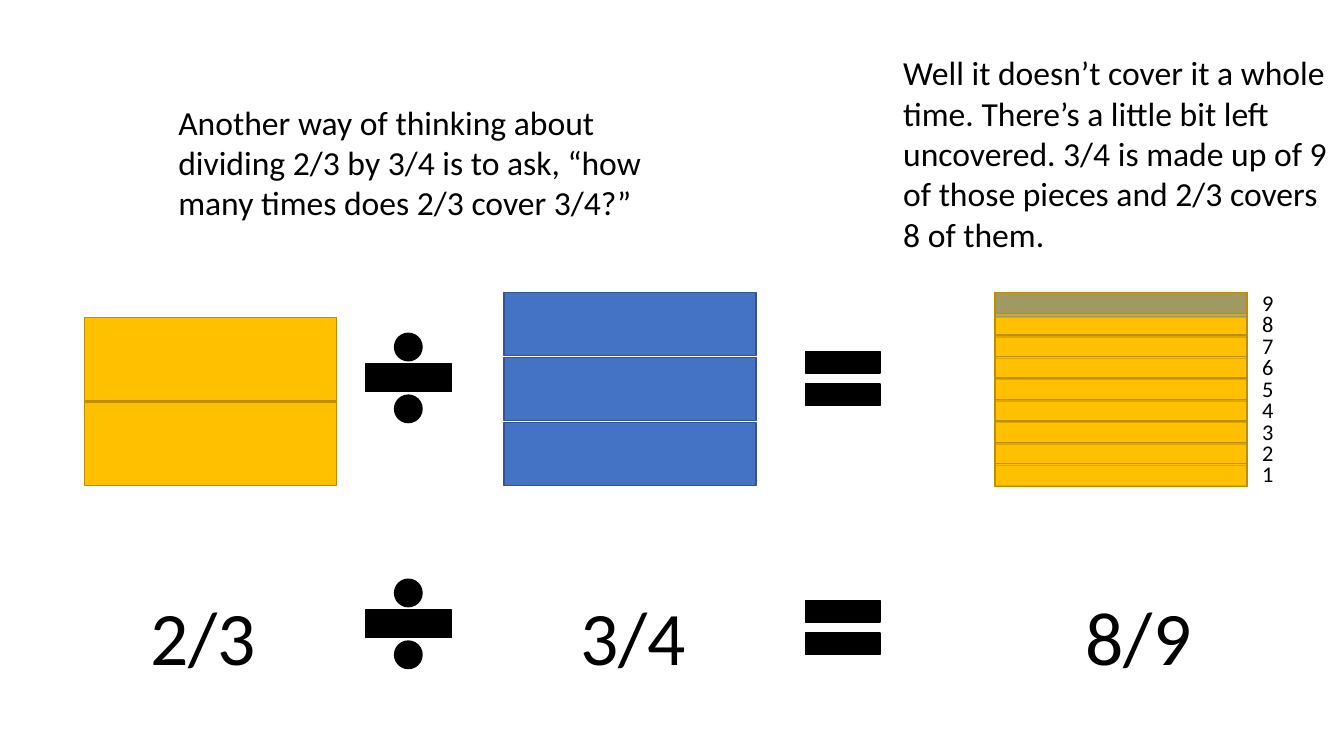
from lxml.etree import SubElement
from pptx import Presentation
from pptx.dml.color import RGBColor
from pptx.enum.shapes import MSO_SHAPE
from pptx.enum.text import MSO_AUTO_SIZE
from pptx.oxml.ns import qn
from pptx.util import Inches, Pt

HUES = {
    "ink": "000000",
    "gold": "FFC000",
    "gold edge": "BD8E00",
    "blue": "4472C4",
    "blue edge": "325491",
}
ASK = ("Another way of thinking about dividing 2/3 by 3/4 is to ask, "
       "“how many times does 2/3 cover 3/4?”")
REPLY = ("Well it doesn’t cover it a whole time. There’s a little bit left "
         "uncovered. 3/4 is made up of 9 of those pieces and 2/3 covers "
         "8 of them.")
WIDTH = 2.5
TOP = 2.9
STEP = 0.2125


def hue(name):
    """Return the named colour."""
    return RGBColor.from_string(HUES[name])


def add_form(shapes, kind, box, fill, edge, alpha=None):
    """Add a filled and outlined preset shape."""
    form = shapes.add_shape(kind, *map(Inches, box))
    form.shadow.inherit = False
    form.fill.solid()
    form.fill.fore_color.rgb = hue(fill)
    form.line.color.rgb = hue(edge)
    form.line.width = Pt(1)
    if alpha is not None:
        tint = form.fill._xPr.find(".//" + qn("a:srgbClr"))
        SubElement(tint, qn("a:alpha")).set("val", str(alpha * 1000))


def add_text(shapes, text, box, size, wrap=False):
    """Add a text box in the slide's font."""
    frame = shapes.add_textbox(*map(Inches, box)).text_frame
    frame.word_wrap = wrap
    frame.auto_size = MSO_AUTO_SIZE.SHAPE_TO_FIT_TEXT
    run = frame.paragraphs[0].add_run()
    run.text = text
    run.font.color.rgb = hue("ink")
    for key, value in {"name": "Calibri", "size": Pt(size)}.items():
        setattr(run.font, key, value)


def add_stack(shapes, left, top, count, step, high, tone, alpha=None):
    """Stack equal bars downwards."""
    for row in range(count):
        box = (left, top + row * step, WIDTH, high)
        add_form(shapes, MSO_SHAPE.RECTANGLE, box, tone, tone + " edge", alpha)


def add_thirds(shapes, left):
    """Stack the three blue bars of 3/4."""
    add_stack(shapes, left, TOP, 3, 0.645, 0.63, "blue")


def add_cover(shapes, left):
    """Lay 2/3 over 3/4 and count the ninths."""
    add_thirds(shapes, left)
    add_stack(shapes, left, 3.15, 1, 0, 1.67, "gold")
    add_stack(shapes, left, TOP, 9, STEP, 0.23, "gold", 50)
    for row in range(9):
        box = (12.42, 2.82 + row * STEP, 0.32, 0.37)
        add_text(shapes, str(9 - row), box, 16)


def add_signs(shapes, split, equal):
    """Add a divide sign and an equal sign at the given tops."""
    for kind, box in (
        (MSO_SHAPE.MATH_DIVIDE, (3.47, split, 1.16, 1.16)),
        (MSO_SHAPE.MATH_EQUAL, (7.86, equal, 1, 0.91)),
    ):
        add_form(shapes, kind, box, "ink", "ink")


def main():
    """Build and save the slide."""
    deck = Presentation()
    deck.slide_width, deck.slide_height = Inches(13.33), Inches(7.5)
    shapes = deck.slides.add_slide(deck.slide_layouts[6]).shapes
    add_signs(shapes, 3.17, 3.3)
    add_signs(shapes, 5.61, 5.77)
    for text, left in (("2/3", 1.39), ("3/4", 5.66), ("8/9", 10.67)):
        add_text(shapes, text, (left, 5.8, 1.26, 1.01), 54)
    add_stack(shapes.add_group_shape().shapes, 0.84, 3.15, 2, 0.84, 0.83, "gold")
    add_thirds(shapes.add_group_shape().shapes, 5)
    add_cover(shapes.add_group_shape().shapes, 9.87)
    add_text(shapes, ASK, (1.67, 0.96, 5.25, 1.31), 24, True)
    add_text(shapes, REPLY, (8.86, 0.47, 4.43, 2.12), 24, True)
    deck.save("out.pptx")


if __name__ == "__main__":
    main()
